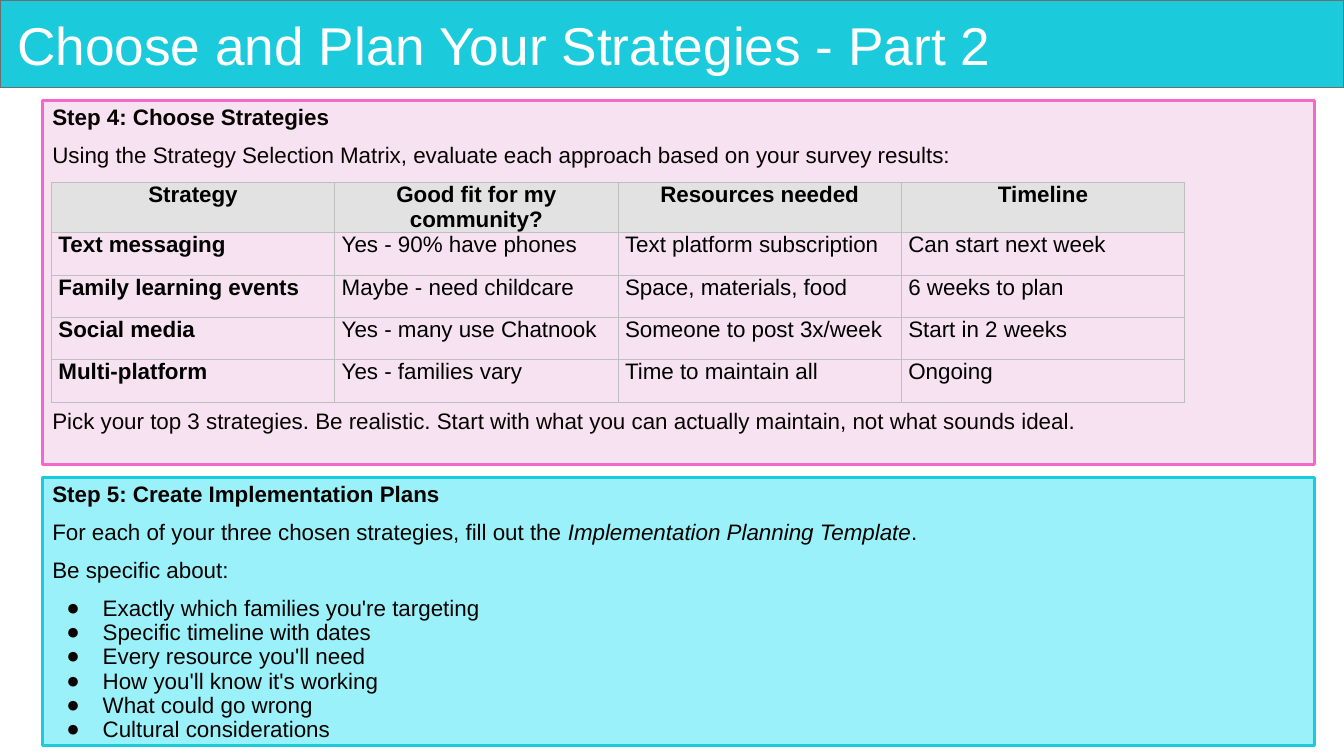
from lxml import etree
from pptx import Presentation
from pptx.dml.color import RGBColor
from pptx.enum.shapes import MSO_SHAPE
from pptx.enum.text import MSO_ANCHOR, MSO_AUTO_SIZE, PP_ALIGN
from pptx.oxml.ns import qn
from pptx.util import Inches, Pt

RECT = MSO_SHAPE.RECTANGLE
TOP, MIDDLE = MSO_ANCHOR.TOP, MSO_ANCHOR.MIDDLE
LEFT, CENTER = PP_ALIGN.LEFT, PP_ALIGN.CENTER
NO_FIT = MSO_AUTO_SIZE.NONE

SLIDE_W, SLIDE_H = 13.33, 7.5
FONT, BODY_SIZE, TITLE_SIZE = "Arial", 16, 38
INK, BLACK, WHITE = "080301", "000000", "FFFFFF"
CYAN, PALE_CYAN = "1BCBDC", "9BF1F9"
PINK, PALE_PINK = "F766CA", "F6E2F0"
GREY, HEADER_GREY, BAR_EDGE = "BFBFBF", "E2E2E2", "6C6E70"

LINE_SPACING, PARAGRAPH_GAP = 0.9, 10
TABLE_GAP = 173  # points kept free for the table between two paragraphs
PANEL_X, PANEL_W = 0.42, 12.62
HEADER_ROW, BODY_ROW, COLUMN_W = 0.5, 0.42, 2.81

STRATEGIES = [
    ("Strategy", "Good fit for my community?", "Resources needed", "Timeline"),
    ("Text messaging", "Yes - 90% have phones", "Text platform subscription",
     "Can start next week"),
    ("Family learning events", "Maybe - need childcare",
     "Space, materials, food", "6 weeks to plan"),
    ("Social media", "Yes - many use Chatnook", "Someone to post 3x/week",
     "Start in 2 weeks"),
    ("Multi-platform", "Yes - families vary", "Time to maintain all", "Ongoing"),
]
PLAN_DETAILS = [
    "Exactly which families you're targeting",
    "Specific timeline with dates",
    "Every resource you'll need",
    "How you'll know it's working",
    "What could go wrong",
    "Cultural considerations",
]


def color(hex_string):
    return RGBColor.from_string(hex_string)


def add_run(paragraph, text, size=BODY_SIZE, ink=INK, bold=False, italic=False):
    run = paragraph.add_run()
    run.text = text
    font = run.font
    font.name, font.size, font.bold, font.italic = FONT, Pt(size), bold, italic
    font.color.rgb = color(ink)


def set_frame(frame, anchor, inset_x, inset_y):
    frame.word_wrap = True
    frame.auto_size = NO_FIT
    frame.vertical_anchor = anchor
    frame.margin_left = frame.margin_right = Inches(inset_x)
    frame.margin_top = frame.margin_bottom = Inches(inset_y)


def add_box(slide, box, fill, edge, edge_width):
    shape = slide.shapes.add_shape(RECT, *map(Inches, box))
    shape.shadow.inherit = False
    shape.fill.solid()
    shape.fill.fore_color.rgb = color(fill)
    shape.line.color.rgb = color(edge)
    shape.line.width = Pt(edge_width)
    return shape


def add_paragraph(frame, runs, gap=PARAGRAPH_GAP, bullet=False):
    """Append a paragraph; runs are (text, style) pairs."""
    first = not frame.paragraphs[0].runs
    paragraph = frame.paragraphs[0] if first else frame.add_paragraph()
    paragraph.alignment = LEFT
    paragraph.line_spacing = LINE_SPACING
    paragraph.space_before = Pt(0 if first else gap)
    if bullet:
        properties = paragraph._p.get_or_add_pPr()
        properties.set("marL", str(Inches(0.5)))
        properties.set("indent", str(Inches(-0.36)))
        bullet_color = etree.SubElement(properties, qn("a:buClr"))
        etree.SubElement(bullet_color, qn("a:srgbClr"), val=INK)
        etree.SubElement(properties, qn("a:buFont"), typeface=FONT)
        etree.SubElement(properties, qn("a:buChar"), char="●")
    for text, style in runs:
        add_run(paragraph, text, **style)


def add_title_bar(slide, box, text):
    left, top, width, height = box
    bar = add_box(slide, box, CYAN, BAR_EDGE, 1)
    title = slide.shapes.title
    title._element.addprevious(bar._element)  # bar goes behind the title
    title.left, title.top = Inches(left + 0.11), Inches(top + 0.09)
    title.width, title.height = Inches(width - 0.27), Inches(height - 0.09)
    set_frame(title.text_frame, MIDDLE, 0.06, 0.06)
    paragraph = title.text_frame.paragraphs[0]
    paragraph.alignment = LEFT
    paragraph.line_spacing = LINE_SPACING
    add_run(paragraph, text, TITLE_SIZE, WHITE)


def add_panel(slide, box, fill, edge, heading):
    panel = add_box(slide, box, fill, edge, 2.25)
    frame = panel.text_frame
    set_frame(frame, TOP, 0.1, 0.05)
    add_paragraph(frame, [(heading, {"bold": True})])
    return frame


def set_borders(cell):
    properties = cell._tc.get_or_add_tcPr()
    for position, side in enumerate(("a:lnL", "a:lnR", "a:lnT", "a:lnB")):
        border = etree.Element(qn(side), w=str(Pt(0.75)))
        fill = etree.SubElement(border, qn("a:solidFill"))
        etree.SubElement(fill, qn("a:srgbClr"), val=GREY)
        properties.insert(position, border)


def add_strategy_table(slide, left, top):
    rows, columns = len(STRATEGIES), len(STRATEGIES[0])
    height = HEADER_ROW + (rows - 1) * BODY_ROW
    table = slide.shapes.add_table(
        rows, columns, Inches(left), Inches(top),
        Inches(columns * COLUMN_W), Inches(height)).table
    table.horz_banding = False
    for column in table.columns:
        column.width = Inches(COLUMN_W)
    for r, strategy in enumerate(STRATEGIES):
        header = r == 0
        table.rows[r].height = Inches(HEADER_ROW if header else BODY_ROW)
        for c, text in enumerate(strategy):
            cell = table.cell(r, c)
            cell.margin_left = cell.margin_right = Inches(0.07)
            cell.margin_top = cell.margin_bottom = 0
            cell.vertical_anchor = TOP
            if header:
                cell.fill.solid()
                cell.fill.fore_color.rgb = color(HEADER_GREY)
            else:
                cell.fill.background()
            set_borders(cell)
            paragraph = cell.text_frame.paragraphs[0]
            paragraph.alignment = CENTER if header else LEFT
            add_run(paragraph, text, ink=BLACK, bold=header or c == 0)


def add_choose_step(slide, box):
    left, top = box[:2]
    frame = add_panel(slide, box, PALE_PINK, PINK, "Step 4: Choose Strategies")
    add_paragraph(frame, [("Using the Strategy Selection Matrix, evaluate each "
                           "approach based on your survey results:", {})])
    add_paragraph(frame, [("Pick your top 3 strategies. Be realistic. Start with "
                           "what you can actually maintain, not what sounds "
                           "ideal.", {})], gap=TABLE_GAP)
    add_strategy_table(slide, left + 0.09, top + 0.81)


def add_plan_step(slide, box):
    frame = add_panel(slide, box, PALE_CYAN, CYAN,
                      "Step 5: Create Implementation Plans")
    add_paragraph(frame, [
        ("For each of your three chosen strategies, fill out the ", {}),
        ("Implementation Planning Template", {"italic": True}),
        (".", {}),
    ])
    add_paragraph(frame, [("Be specific about:", {})])
    for index, detail in enumerate(PLAN_DETAILS):
        add_paragraph(frame, [(detail, {})], bullet=True,
                      gap=0 if index else PARAGRAPH_GAP)


def main():
    deck = Presentation()
    deck.slide_width, deck.slide_height = Inches(SLIDE_W), Inches(SLIDE_H)
    slide = deck.slides.add_slide(deck.slide_layouts[5])
    add_title_bar(slide, (0, 0, SLIDE_W, 0.87),
                  "Choose and Plan Your Strategies - Part 2")
    add_choose_step(slide, (PANEL_X, 1, PANEL_W, 3.61))
    add_plan_step(slide, (PANEL_X, 4.74, PANEL_W, 2.66))
    deck.save("out.pptx")


if __name__ == "__main__":
    main()
